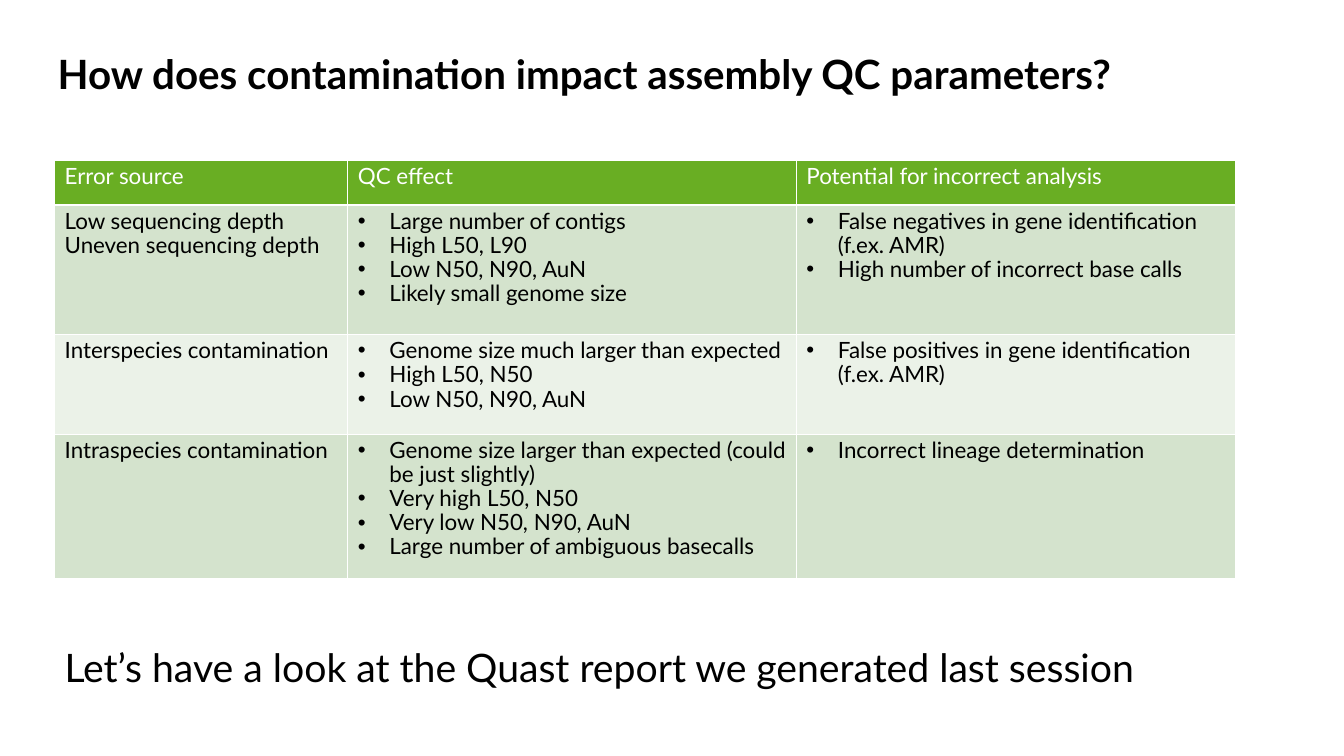
from lxml.etree import SubElement
from pptx import Presentation
from pptx.dml.color import RGBColor
from pptx.enum.text import MSO_ANCHOR, MSO_AUTO_SIZE
from pptx.oxml.ns import qn
from pptx.util import Pt

WIDTHS = [209.5, 320.4, 313.9]
HEIGHTS = [32, 92.5, 71.3, 103]
FILLS = ["69AE23", "D4E3CD", "EBF2E8", "D4E3CD"]
ROWS = [
    [["Error source"], ["QC effect"], ["Potential for incorrect analysis"]],
    [["Low sequencing depth", "Uneven sequencing depth"],
     ["Large number of contigs", "High L50, L90", "Low N50, N90, AuN",
      "Likely small genome size"],
     ["False negatives in gene identification (f.ex. AMR)",
      "High number of incorrect base calls"]],
    [["Interspecies contamination"],
     ["Genome size much larger than expected", "High L50, N50",
      "Low N50, N90, AuN"],
     ["False positives in gene identification (f.ex. AMR)"]],
    [["Intraspecies contamination"],
     ["Genome size larger than expected (could be just slightly)",
      "Very high L50, N50", "Very low N50, N90, AuN",
      "Large number of ambiguous basecalls"],
     ["Incorrect lineage determination"]],
]


def color(code):
    return RGBColor.from_string(code)


def bullet(para):
    props = para._p.get_or_add_pPr()
    props.set("marL", str(Pt(22.5)))
    props.set("indent", str(-Pt(22.5)))
    SubElement(props, qn("a:buFont"), typeface="Arial")
    SubElement(props, qn("a:buChar"), char="•")


def write(frame, lines, size, code="000000", bold=False, dots=False):
    for i, line in enumerate(lines):
        para = frame.paragraphs[0] if i == 0 else frame.add_paragraph()
        para.text = line
        para.line_spacing = 0.9
        if dots:
            bullet(para)
        font = para.font
        font.name, font.size, font.bold = "Lato", Pt(size), bold
        font.color.rgb = color(code)


def add_title(slide, left, top, width, height):
    title = slide.shapes.title
    title.left, title.top = Pt(left), Pt(top)
    title.width, title.height = Pt(width), Pt(height)
    frame = title.text_frame
    frame.vertical_anchor = MSO_ANCHOR.MIDDLE
    frame.auto_size = MSO_AUTO_SIZE.NONE
    write(frame, ["How does contamination impact assembly QC parameters?"],
          28.8, bold=True)
    # Title is flush left whatever the layout says
    title.text_frame.paragraphs[0].alignment = 1


def add_grid(slide, left, top):
    table = slide.shapes.add_table(
        len(ROWS), len(WIDTHS), Pt(left), Pt(top),
        Pt(sum(WIDTHS)), Pt(sum(HEIGHTS))).table
    for col, width in zip(table.columns, WIDTHS):
        col.width = Pt(width)
    for r, texts in enumerate(ROWS):
        table.rows[r].height = Pt(HEIGHTS[r])
        for c, lines in enumerate(texts):
            cell = table.cell(r, c)
            cell.fill.solid()
            cell.fill.fore_color.rgb = color(FILLS[r])
            write(cell.text_frame, lines, 16,
                  "000000" if r else "FFFFFF", dots=r > 0 and c > 0)


def add_close(slide, left, top, width, height):
    frame = slide.shapes.add_textbox(
        Pt(left), Pt(top), Pt(width), Pt(height)).text_frame
    frame.word_wrap = False
    frame.auto_size = MSO_AUTO_SIZE.SHAPE_TO_FIT_TEXT
    write(frame, ["Let’s have a look at the Quast report we generated "
                  "last session"], 28)


def main():
    deck = Presentation()
    deck.slide_width, deck.slide_height = Pt(960), Pt(540)
    slide = deck.slides.add_slide(deck.slide_layouts[5])
    # Heading, table, closing line
    add_title(slide, 34, 17.3, 815, 75)
    add_grid(slide, 39, 114.5)
    add_close(slide, 39, 459.4, 802, 38)
    deck.save("out.pptx")


if __name__ == "__main__":
    main()
